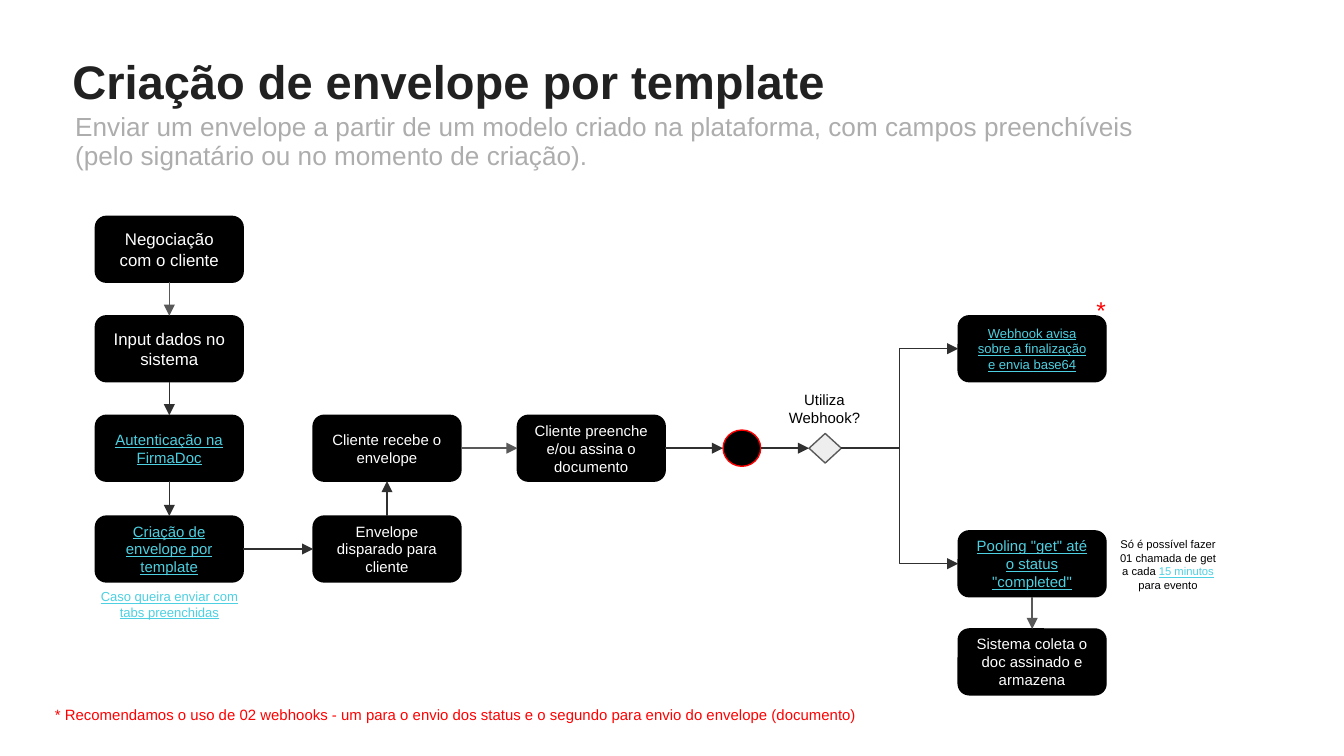
"""Builds the slide on creating an envelope from a template."""
from pptx import Presentation
from pptx.dml.color import RGBColor
from pptx.enum.shapes import MSO_CONNECTOR as Link, MSO_SHAPE as Kind
from pptx.enum.text import MSO_ANCHOR as Anchor, PP_ALIGN as Align
from pptx.oxml.ns import qn
from pptx.util import Inches, Pt
from lxml.etree import SubElement

BLACK = RGBColor(0, 0, 0)
WHITE = RGBColor(255, 255, 255)
RED = RGBColor(255, 0, 0)
CYAN = RGBColor(0x4D, 0xD0, 0xE1)
INK = RGBColor(0x21, 0x21, 0x21)
PALE = RGBColor(0xAD, 0xAD, 0xAD)
MIST = RGBColor(0xEE, 0xEE, 0xEE)
GRAY = RGBColor(0x59, 0x59, 0x59)
DARK = RGBColor(0x30, 0x30, 0x30)

WIDE, HIGH = 1.1, 0.49
COLS = [0.71, 2.33, 3.85, 7.13]
ROWS = [1.61, 2.35, 3.09, 3.84]

STEPS = {
    "deal": (COLS[0], ROWS[0], "Negociação com o cliente", 9, WHITE),
    "input": (COLS[0], ROWS[1], "Input dados no sistema", 9, WHITE),
    "auth": (COLS[0], ROWS[2], "Autenticação na FirmaDoc", 8, CYAN),
    "create": (COLS[0], ROWS[3], "Criação de envelope por template", 8, CYAN),
    "send": (COLS[1], ROWS[3], "Envelope disparado para cliente", 8, WHITE),
    "receive": (COLS[1], ROWS[2], "Cliente recebe o envelope", 8, WHITE),
    "sign": (COLS[2], ROWS[2], "Cliente preenche e/ou assina o documento", 8, WHITE),
    "webhook": (COLS[3], ROWS[1], "Webhook avisa sobre a finalização e envia base64", 7, CYAN),
    "pooling": (COLS[3], 3.95, 'Pooling "get" até o status "completed"', 8, CYAN),
    "store": (COLS[3], 4.68, "Sistema coleta o doc assinado e armazena", 8, WHITE),
}
NODES = {
    "event": (Kind.OVAL, 5.38, 0.28, 0.27, BLACK, RED),
    "choice": (Kind.FLOWCHART_DECISION, 6.02, 0.24, 0.22, MIST, GRAY),
}
FLOWS = [
    ("deal", "input", GRAY), ("input", "auth", DARK), ("auth", "create", DARK),
    ("create", "send", DARK), ("send", "receive", DARK), ("receive", "sign", GRAY),
    ("sign", "event", DARK), ("event", "choice", DARK), ("choice", "webhook", DARK),
    ("choice", "pooling", DARK), ("pooling", "store", GRAY),
]
NOTES = [
    ((0.65, 4.28, 1.22, 0.44), [("Caso queira enviar com tabs preenchidas", CYAN)], 7, Align.CENTER),
    ((5.73, 2.81, 0.81, 0.47), [("Utiliza Webhook?", BLACK)], 8, Align.CENTER),
    ((8.23, 3.9, 0.92, 0.61), [("Só é possível fazer 01 chamada de get a cada ", BLACK),
                               ("15 minutos ", CYAN), ("para evento", BLACK)], 6, Align.CENTER),
    ((8.06, 2.1, 0.81, 0.42), [("*", RED)], 13, Align.LEFT),
    ((0.31, 5.18, 6.94, 0.34), [("* Recomendamos o uso de 02 webhooks - um para o envio dos status "
                                 "e o segundo para envio do envelope (documento)", RED)], 8, Align.LEFT),
]
TITLE = "Criação de envelope por template"
LEAD = ("Enviar um envelope a partir de um modelo criado na plataforma, "
        "com campos preenchíveis (pelo signatário ou no momento de criação).")


def write(shape, parts, size, align, anchor, inset=0.1):
    frame = shape.text_frame
    frame.word_wrap = True
    frame.vertical_anchor = anchor
    frame.margin_left = frame.margin_right = Inches(inset)
    frame.margin_top = frame.margin_bottom = Inches(inset)
    para = frame.paragraphs[0]
    para.alignment = align
    para.font.name = "Arial"
    para.font.size = Pt(size)
    for text, color in parts:
        run = para.add_run()
        run.text = text
        run.font.color.rgb = color
        if color == CYAN:
            run.font.underline = True
    return para


def label(slide, box, parts, size, align=Align.LEFT, anchor=Anchor.TOP, inset=0.1):
    shape = slide.shapes.add_textbox(*map(Inches, box))
    return write(shape, parts, size, align, anchor, inset)


def draw(slide, kind, box, fill, edge):
    shape = slide.shapes.add_shape(kind, *map(Inches, box))
    shape.shadow.inherit = False
    shape.fill.solid()
    shape.fill.fore_color.rgb = fill
    shape.line.color.rgb = edge
    shape.line.width = Pt(0.75)
    return shape


def ends(a, b):
    mid_a, mid_b = a.left + a.width // 2, b.left + b.width // 2
    if a.left == b.left:
        if a.top < b.top:
            return mid_a, a.top + a.height, mid_b, b.top
        return mid_a, a.top, mid_b, b.top + b.height
    return (a.left + a.width, a.top + a.height // 2,
            b.left, b.top + b.height // 2)


def join(slide, a, b, color):
    x1, y1, x2, y2 = ends(a, b)
    bent = x1 != x2 and abs(y1 - y2) > Inches(0.1)
    line = slide.shapes.add_connector(Link.ELBOW if bent else Link.STRAIGHT, x1, y1, x2, y2)
    line.line.color.rgb = color
    line.line.width = Pt(0.75)
    SubElement(line.line._get_or_add_ln(), qn("a:tailEnd"), type="triangle")
    SubElement(line._element.spPr, qn("a:effectLst"))


def main():
    deck = Presentation()
    deck.slide_width = Inches(10)
    deck.slide_height = deck.slide_width * 9 // 16
    slide = deck.slides.add_slide(deck.slide_layouts[6])

    head = label(slide, (0.44, 0.28, 9.32, 0.63), [(TITLE, INK)], 25.2, anchor=Anchor.BOTTOM)
    head.font.bold = True
    lead = label(slide, (0.56, 0.85, 8.3, 0.27), [(LEAD, PALE)], 14, inset=0)
    lead.line_spacing = 0.9

    parts = {}
    for name, (x, y, text, size, color) in STEPS.items():
        parts[name] = draw(slide, Kind.ROUNDED_RECTANGLE, (x, y, WIDE, HIGH), BLACK, BLACK)
        write(parts[name], [(text, color)], size, Align.CENTER, Anchor.MIDDLE)
    axis = ROWS[2] + HIGH / 2
    for name, (kind, x, w, h, fill, edge) in NODES.items():
        parts[name] = draw(slide, kind, (x, axis - h / 2, w, h), fill, edge)
    for start, end, color in FLOWS:
        join(slide, parts[start], parts[end], color)
    for note in NOTES:
        label(slide, *note)
    deck.save("out.pptx")


if __name__ == "__main__":
    main()
